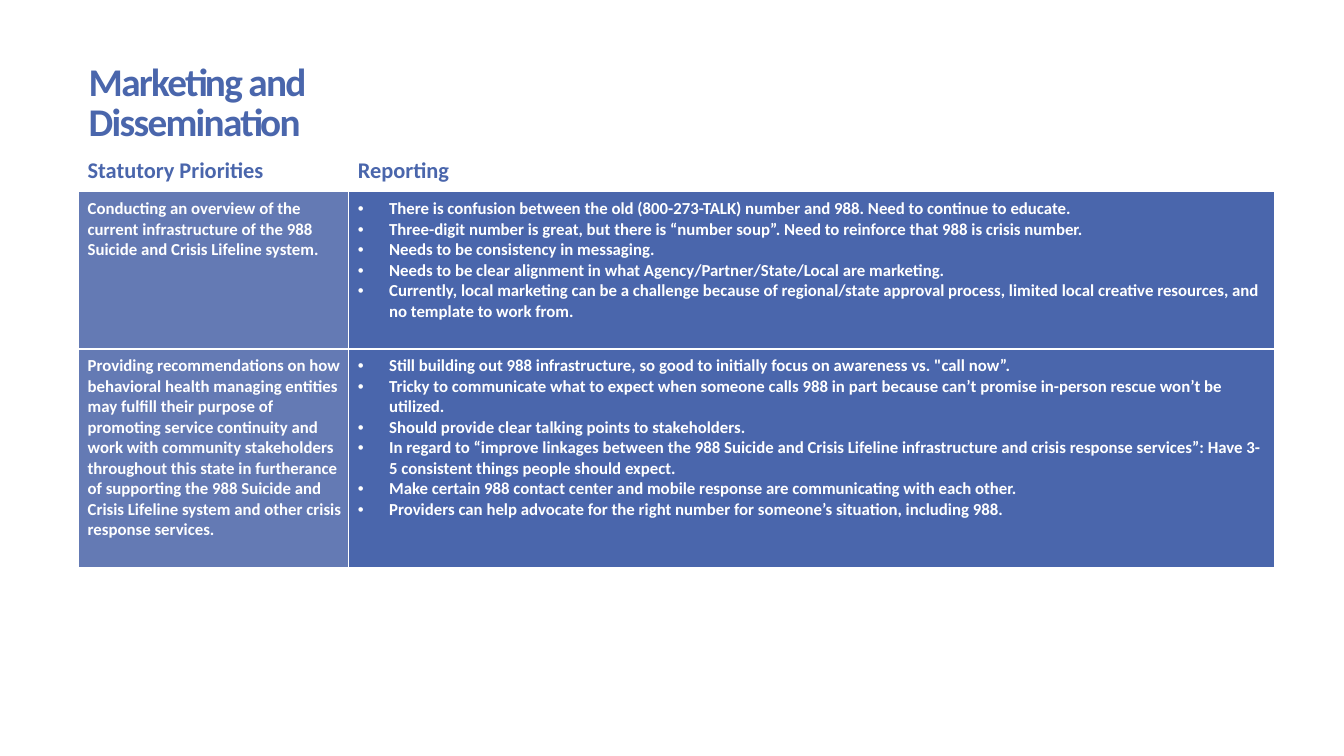
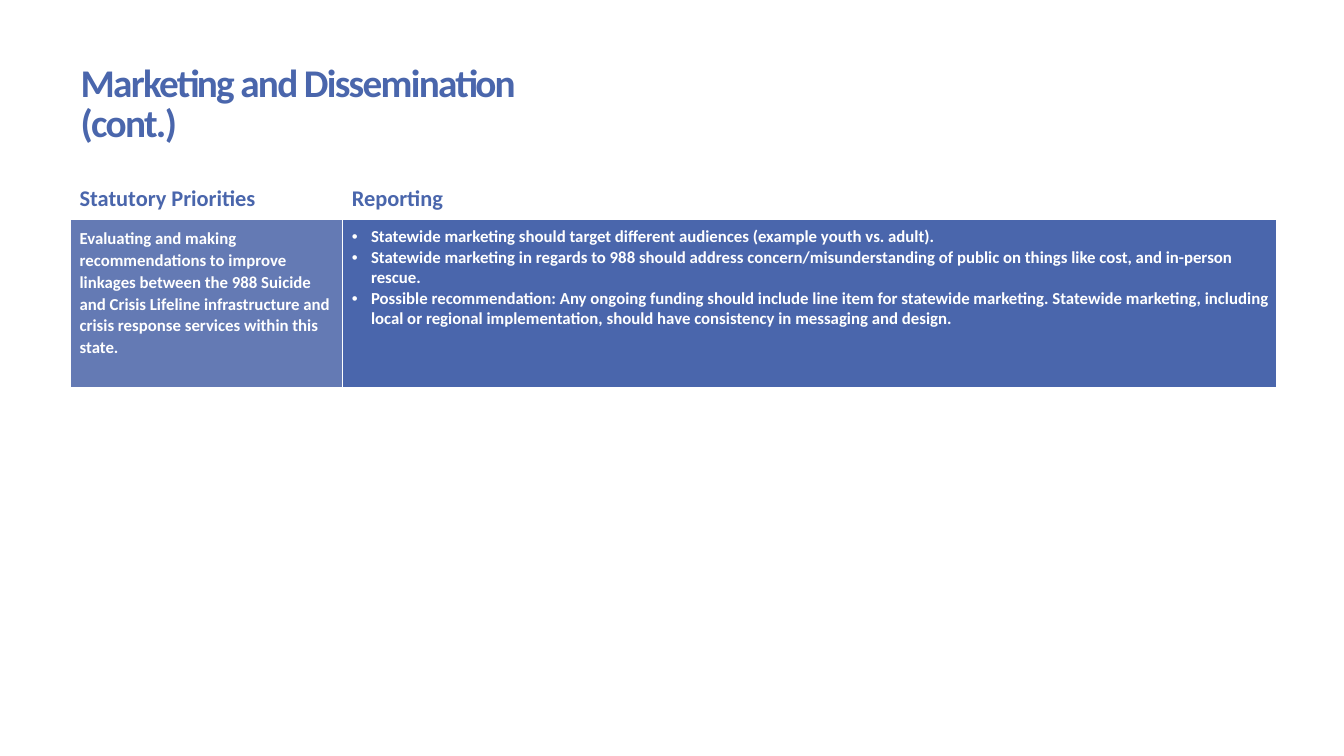
"""Build two slides on 988 marketing and dissemination."""
import dataclasses

import pptx
import pptx.dml.color
import pptx.enum.text
import pptx.oxml.xmlchemy
import pptx.util

Inches = pptx.util.Inches
Pt = pptx.util.Pt
RGB = pptx.dml.color.RGBColor.from_string
new_element = pptx.oxml.xmlchemy.OxmlElement


@dataclasses.dataclass(frozen=True)
class Theme:
    """Colours, font and type sizes."""
    font: str = "Calibri"
    blue: str = "4A66AC"
    soft_blue: str = "647AB4"
    white: str = "FFFFFF"
    title_size: int = 28
    heading_size: int = 16
    body_size: int = 12


class Deck:
    """Holds the style and the current slide."""

    def __init__(self, theme):
        self.theme = theme
        self.presentation = pptx.Presentation()
        self.presentation.slide_width = Inches(13.33)
        self.presentation.slide_height = Inches(7.5)
        self.slide = None

    def style(self, paragraph, size, color):
        font = paragraph.font
        font.name, font.size, font.bold = self.theme.font, Pt(size), True
        font.color.rgb = RGB(color)

    def title(self, text, left, top, width):
        layout = self.presentation.slide_layouts[5]
        self.slide = self.presentation.slides.add_slide(layout)
        title = self.slide.shapes.title
        title.left, title.top = Inches(left), Inches(top)
        title.width, title.height = Inches(width), Inches(0.54)
        frame = title.text_frame
        frame.text = text
        frame.word_wrap = True
        frame.auto_size = pptx.enum.text.MSO_AUTO_SIZE.NONE
        frame.vertical_anchor = pptx.enum.text.MSO_ANCHOR.TOP
        paragraph = frame.paragraphs[0]
        paragraph.alignment = pptx.enum.text.PP_ALIGN.LEFT
        paragraph.line_spacing = 0.85
        self.style(paragraph, self.theme.title_size, self.theme.blue)
        paragraph.runs[0].font._element.set("spc", "-120")

    def bullet(self, paragraph, indent):
        properties = paragraph._p.get_or_add_pPr()
        properties.set("marL", str(Inches(indent)))
        properties.set("indent", str(-Inches(indent)))
        typeface = new_element("a:buFont")
        typeface.set("typeface", "Arial")
        mark = new_element("a:buChar")
        mark.set("char", "•")
        properties.insert(0, typeface)
        properties.insert(1, mark)

    def borders(self, cell):
        properties = cell._tc.get_or_add_tcPr()
        for position, side in enumerate(("lnL", "lnR", "lnT", "lnB")):
            line = new_element(f"a:{side}")
            line.set("w", str(Pt(1)))
            fill = new_element("a:solidFill")
            color = new_element("a:srgbClr")
            color.set("val", self.theme.white)
            fill.append(color)
            line.append(fill)
            properties.insert(position, line)

    def cell(self, cell, lines, fill, color, size, indent=0, spacing=None):
        cell.fill.solid()
        cell.fill.fore_color.rgb = RGB(fill)
        cell.margin_left, cell.margin_right = Inches(0.09), Inches(0.06)
        cell.margin_top = cell.margin_bottom = Inches(0.07)
        self.borders(cell)
        cell.text_frame.text = "\n".join(lines)
        for paragraph in cell.text_frame.paragraphs:
            if indent:
                self.bullet(paragraph, indent)
            if spacing:
                paragraph.line_spacing = spacing
            self.style(paragraph, size, color)

    def priorities(self, left, top, widths, heights, rows, indent, spacing=None):
        theme = self.theme
        heights = [0.41, *heights]
        table = self.slide.shapes.add_table(
            len(heights), len(widths), Inches(left), Inches(top),
            Inches(sum(widths)), Inches(sum(heights))).table
        table.first_row = table.horz_banding = False
        for column, width in zip(table.columns, widths):
            column.width = Inches(width)
        for row, height in zip(table.rows, heights):
            row.height = Inches(height)
        for column, heading in enumerate(("Statutory Priorities", "Reporting")):
            heading_cell = table.cell(0, column)
            self.cell(heading_cell, [heading], theme.white, theme.blue,
                      theme.heading_size)
            heading_cell.vertical_anchor = pptx.enum.text.MSO_ANCHOR.MIDDLE
        for number, (priority, reports) in enumerate(rows, 1):
            self.cell(table.cell(number, 0), [priority], theme.soft_blue,
                      theme.white, theme.body_size, spacing=spacing)
            self.cell(table.cell(number, 1), reports, theme.blue,
                      theme.white, theme.body_size, indent=indent)


FIRST_ROWS = [
    ("Conducting an overview of the current infrastructure of the 988 Suicide "
     "and Crisis Lifeline system.",
     ["There is confusion between the old (800-273-TALK) number and 988. "
      "Need to continue to educate.",
      "Three-digit number is great, but there is “number soup”. "
      "Need to reinforce that 988 is crisis number.",
      "Needs to be consistency in messaging.",
      "Needs to be clear alignment in what Agency/Partner/State/Local are marketing.",
      "Currently, local marketing can be a challenge because of regional/state "
      "approval process, limited local creative resources, and no template to "
      "work from."]),
    ("Providing recommendations on how behavioral health managing entities may "
     "fulfill their purpose of promoting service continuity and work with "
     "community stakeholders throughout this state in furtherance of supporting "
     "the 988 Suicide and Crisis Lifeline system and other crisis response "
     "services.",
     ["Still building out 988 infrastructure, so good to initially focus on "
      "awareness vs. \"call now”.",
      "Tricky to communicate what to expect when someone calls 988 in part "
      "because can’t promise in-person rescue won’t be utilized.",
      "Should provide clear talking points to stakeholders.",
      "In regard to “improve linkages between the 988 Suicide and Crisis Lifeline "
      "infrastructure and crisis response services”: Have 3-5 consistent things "
      "people should expect.",
      "Make certain 988 contact center and mobile response are communicating "
      "with each other.",
      "Providers can help advocate for the right number for someone’s situation, "
      "including 988."]),
]

CONTINUED_ROWS = [
    ("Evaluating and making recommendations to improve linkages between the 988 "
     "Suicide and Crisis Lifeline infrastructure and crisis response services "
     "within this state.",
     ["Statewide marketing should target different audiences "
      "(example youth vs. adult).",
      "Statewide marketing in regards to 988 should address "
      "concern/misunderstanding of public on things like cost, and in-person "
      "rescue.",
      "Possible recommendation: Any ongoing funding should include line item for "
      "statewide marketing. Statewide marketing, including local or regional "
      "implementation, should have consistency in messaging and design."]),
]


def main():
    deck = Deck(Theme())
    deck.title("Marketing and Dissemination", 0.78, 0.59, 4.4)
    deck.priorities(0.78, 1.49, (2.68, 9.18), (1.56, 2.17), FIRST_ROWS, 0.31)
    deck.title("Marketing and Dissemination (cont.)", 0.7, 0.6, 5.21)
    deck.priorities(0.7, 1.77, (2.7, 9.26), (1.66,), CONTINUED_ROWS, 0.19, 1.07)
    deck.presentation.save("out.pptx")


if __name__ == "__main__":
    main()
